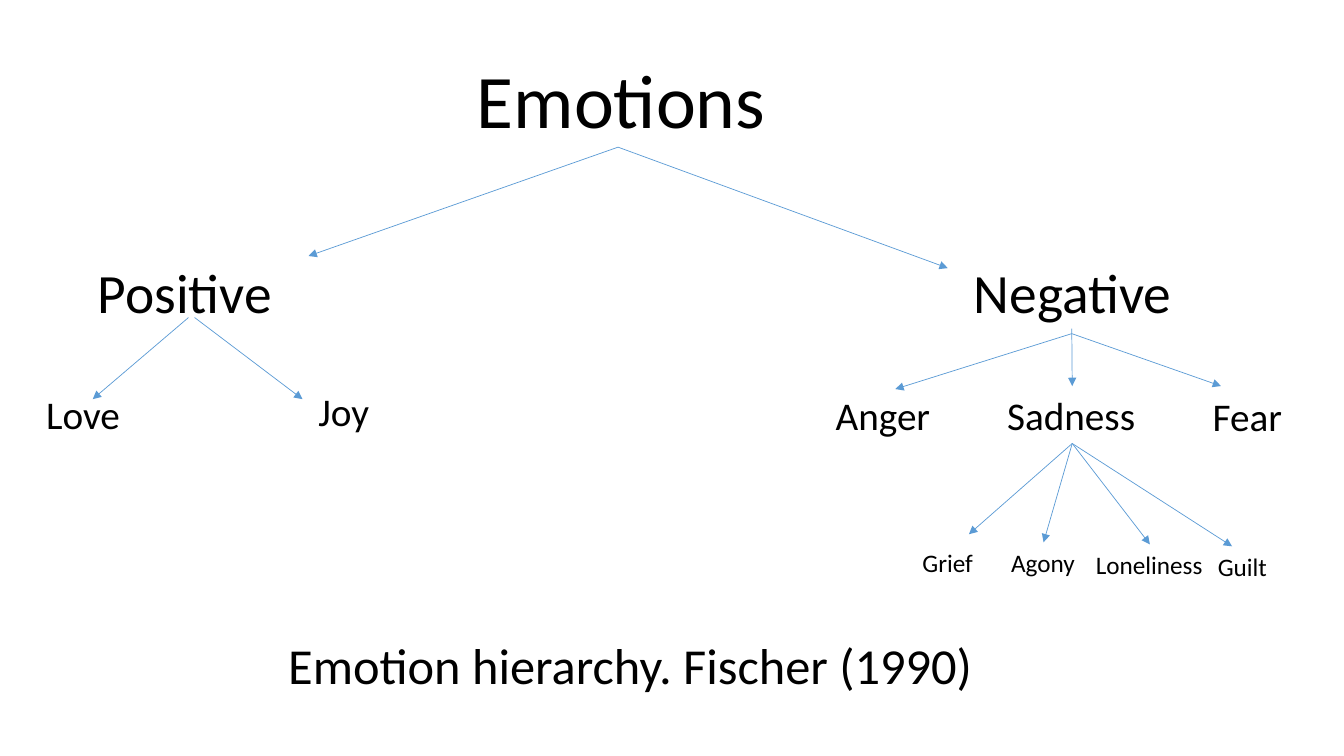
from lxml.etree import SubElement
from pptx import Presentation
from pptx.dml.color import RGBColor
from pptx.enum.shapes import MSO_CONNECTOR as Connector
from pptx.enum.text import MSO_ANCHOR as Anchor, MSO_AUTO_SIZE as AutoSize, PP_ALIGN as Align
from pptx.oxml.ns import qn
from pptx.util import Inches, Pt

TOP, BOTTOM = 0, 2


def color(value):
    return RGBColor.from_string(value)


class HierarchySlide:
    font_name = "Calibri"
    text_color = "000000"
    arrow_color = "5B9BD5"

    def __init__(self, presentation):
        self.slide = presentation.slides.add_slide(presentation.slide_layouts[5])
        self.shapes = self.slide.shapes

    def set_text(self, shape, text, size):
        frame = shape.text_frame
        frame_format = {
            "text": text,
            "word_wrap": False,
            "auto_size": AutoSize.NONE,
            "vertical_anchor": Anchor.TOP,
            "margin_right": 0,
        }
        for name, value in frame_format.items():
            setattr(frame, name, value)
        paragraph = frame.paragraphs[0]
        paragraph.alignment = Align.LEFT
        paragraph.line_spacing = 1.0
        font = paragraph.runs[0].font
        for name, value in {"name": self.font_name, "size": Pt(size)}.items():
            setattr(font, name, value)
        font.color.rgb = color(self.text_color)
        return shape

    def title(self, text, left, top, width, height, size):
        shape = self.shapes.title
        position = {"left": left, "top": top, "width": width, "height": height}
        for name, value in position.items():
            setattr(shape, name, Inches(value))
        return self.set_text(shape, text, size)

    def label(self, text, left, top, width, height, size):
        box = self.shapes.add_textbox(*map(Inches, (left, top, width, height)))
        return self.set_text(box, text, size)

    def arrow(self, start, end, source=None, target=None):
        connector = self.shapes.add_connector(Connector.STRAIGHT, *map(Inches, start + end))
        if source is not None:
            connector.begin_connect(source, BOTTOM)
        if target is not None:
            connector.end_connect(target, TOP)
        connector.line.color.rgb = color(self.arrow_color)
        connector.line.width = Pt(0.5)
        properties = connector.element.spPr
        SubElement(properties.find(qn("a:ln")), qn("a:tailEnd"), type="triangle")
        SubElement(properties, qn("a:effectLst"))


def main():
    presentation = Presentation()
    presentation.slide_width = Inches(13.33)
    presentation.slide_height = Inches(7.5)
    hierarchy = HierarchySlide(presentation)

    emotions = hierarchy.title("Emotions", 4.63, 0.47, 3, 0.99, 54)
    levels = [
        (39.6, 0.75, [("Positive", 0.87, 2.51, 2), ("Negative", 9.56, 2.51, 2.14)]),
        (28, 0.57, [
            ("Love", 0.36, 3.82, 0.94), ("Joy", 3.06, 3.79, 0.71),
            ("Anger", 8.19, 3.83, 1.15), ("Sadness", 9.89, 3.83, 1.49),
            ("Fear", 11.93, 3.84, 0.9),
        ]),
        (18, 0.4, [
            ("Grief", 9.05, 5.38, 0.71), ("Agony", 9.93, 5.38, 0.84),
            ("Loneliness", 10.77, 5.4, 1.27), ("Guilt", 11.98, 5.42, 0.69),
        ]),
        (36, 0.71, [("Emotion hierarchy. Fischer (1990)", 2.76, 6.24, 7.05)]),
    ]
    labels = {
        text: hierarchy.label(text, left, top, width, height, size)
        for size, height, row in levels
        for text, left, top, width in row
    }

    negative, sadness = labels["Negative"], labels["Sadness"]
    branches = [
        ((6.13, 1.46), emotions, [((3.06, 2.54), None), ((9.4, 2.66), None)]),
        ((1.87, 3.15), None, [((0.92, 3.96), None)]),
        ((1.93, 3.15), None, [((3, 3.96), None)]),
        ((10.63, 3.31), None, [((8.88, 3.86), None), ((12.11, 3.83), None)]),
        ((10.63, 3.26), negative, [((10.63, 3.83), sadness)]),
        ((10.63, 4.41), sadness, [
            ((9.61, 5.3), None), ((10.35, 5.38), labels["Agony"]),
            ((11.41, 5.4), labels["Loneliness"]), ((12.22, 5.42), None),
        ]),
    ]
    for start, source, ends in branches:
        for end, target in ends:
            hierarchy.arrow(start, end, source, target)

    presentation.save("out.pptx")


if __name__ == "__main__":
    main()
